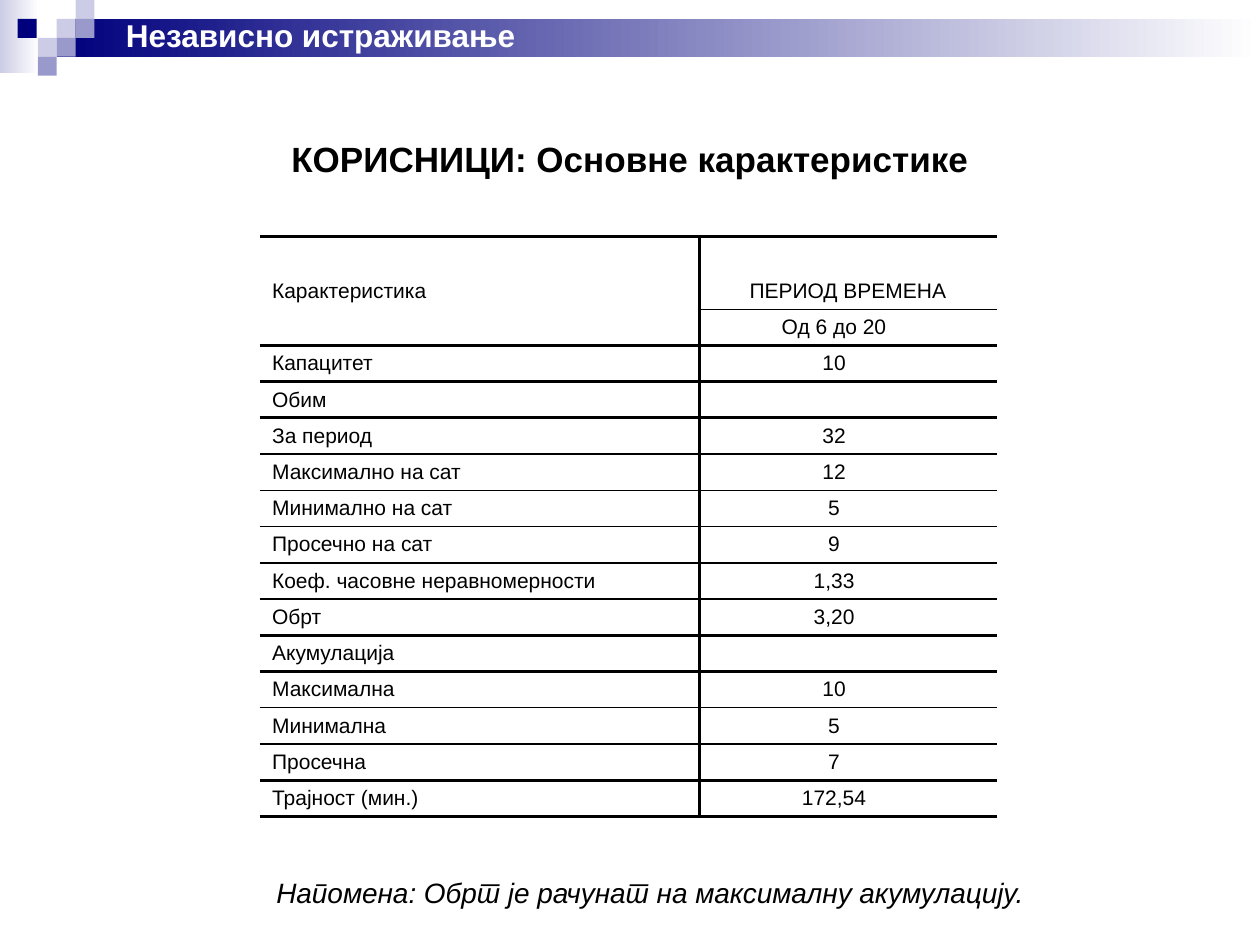
from dataclasses import dataclass

import pptx
import pptx.dml.color
import pptx.enum.shapes
import pptx.enum.text
import pptx.oxml
import pptx.oxml.ns
import pptx.util
from pptx.util import Inches

NO_GRID_STYLE = "{2D5ABB26-0587-4C30-8999-92F81FD0307C}"
NAMESPACE = pptx.oxml.ns.nsdecls("a")
ALIGN = pptx.enum.text.PP_ALIGN
NAVY, LILAC, PALE, WHITE, BLACK = "00007D", "9999CC", "CCCCE6", "FFFFFF", "000000"


@dataclass
class Block:
    """A decorative rectangle, shaded towards white when asked."""
    left: float
    top: float
    color: str
    width: float = 0.15
    height: float = 0.15
    gradient: bool = False


@dataclass
class Row:
    """A table row with the weight of the rule beneath it."""
    label: str
    value: str
    rule: float


BLOCKS = [
    Block(0, 0, PALE, 0.31, 0.58, True),
    Block(0.45, 0.15, NAVY, 9.55, 0.3, True),
    Block(0.45, 0.15, PALE),
    Block(0.6, 0, PALE),
    Block(0.6, 0.15, LILAC),
    Block(0.3, 0.3, PALE),
    Block(0.14, 0.15, NAVY),
    Block(0.45, 0.3, LILAC),
    Block(0.3, 0.45, LILAC),
]

HEADER_ROWS = 2
ROWS = [
    Row("", "", 0),
    Row("Карактеристика", "ПЕРИОД ВРЕМЕНА", 1),
    Row("", "Од 6 до 20", 2),
    Row("Капацитет", "10", 2),
    Row("Обим", "", 2),
    Row("За период", "32", 1),
    Row("Максимално на сат", "12", 1),
    Row("Минимално на сат", "5", 1),
    Row("Просечно на сат", "9", 1),
    Row("Коеф. часовне неравномерности", "1,33", 1),
    Row("Обрт", "3,20", 2),
    Row("Акумулација", "", 2),
    Row("Максимална", "10", 1),
    Row("Минимална", "5", 1),
    Row("Просечна", "7", 2),
    Row("Трајност (мин.)", "172,54", 2),
]
COLUMN_WIDTHS = [3.49, 0.5, 1.14, 0.72]


def rgb(color: str) -> pptx.dml.color.RGBColor:
    """Turn a hex string into a colour."""
    return pptx.dml.color.RGBColor.from_string(color)


def write_text(frame, text: str, *, size: float, color: str = BLACK, bold: bool = False,
               italic: bool = False, align=ALIGN.LEFT) -> None:
    """Write one formatted paragraph into a text frame."""
    frame.word_wrap = True
    paragraph = frame.paragraphs[0]
    paragraph.alignment = align
    if not text:
        paragraph._p.append(pptx.oxml.parse_xml(
            f'<a:endParaRPr {NAMESPACE} sz="{int(size * 100)}">'
            '<a:latin typeface="Arial"/></a:endParaRPr>'))
        return
    run = paragraph.add_run()
    run.text = text
    run._r.get_or_add_rPr().set("lang", "sr-RS")
    run.font.name = "Arial"
    run.font.size = pptx.util.Pt(size)
    run.font.bold = bold
    run.font.italic = italic
    run.font.color.rgb = rgb(color)


def draw_block(slide, block: Block) -> None:
    """Draw one decorative rectangle."""
    shape = slide.shapes.add_shape(
        pptx.enum.shapes.MSO_SHAPE.RECTANGLE, Inches(block.left), Inches(block.top),
        Inches(block.width), Inches(block.height))
    shape.shadow.inherit = False
    shape.line.fill.background()
    if block.gradient:
        shape.fill.gradient()
        shape.fill.gradient_angle = 0
        for stop, color in zip(shape.fill.gradient_stops, (block.color, WHITE)):
            stop.color.rgb = rgb(color)
    else:
        shape.fill.solid()
        shape.fill.fore_color.rgb = rgb(block.color)


def set_borders(cell, **weights: float) -> None:
    """Set the black or absent borders of a cell, keyed by side in L, R, T, B order."""
    properties = cell._tc.get_or_add_tcPr()
    for side, weight in weights.items():
        paint = (f'<a:solidFill><a:srgbClr val="{BLACK}"/></a:solidFill>' if weight
                 else "<a:noFill/>")
        properties.append(pptx.oxml.parse_xml(
            f'<a:ln{side} {NAMESPACE} w="{pptx.util.Pt(weight)}">{paint}</a:ln{side}>'))


def draw_table(slide) -> None:
    """Draw the table of user characteristics."""
    table = slide.shapes.add_table(
        len(ROWS), len(COLUMN_WIDTHS), Inches(2.06), Inches(1.88),
        Inches(sum(COLUMN_WIDTHS)), Inches(4.6)).table
    table.first_row = table.horz_banding = False
    table._tbl.tblPr.find(pptx.oxml.ns.qn("a:tableStyleId")).text = NO_GRID_STYLE
    for column, width in zip(table.columns, COLUMN_WIDTHS):
        column.width = Inches(width)
    for index, row in enumerate(ROWS):
        is_header = index < HEADER_ROWS
        if is_header:
            table.cell(index, 1).merge(table.cell(index, 3))
        texts = {0: row.label, 1 if is_header else 2: row.value}
        for column in range(len(COLUMN_WIDTHS)):
            cell = table.cell(index, column)
            cell.margin_top = cell.margin_bottom = Inches(0.05)
            write_text(cell.text_frame, texts.get(column, ""), size=12,
                       align=ALIGN.CENTER if column else ALIGN.LEFT)
            above = ROWS[index - 1].rule if index else 2
            if index == HEADER_ROWS and column == 0:
                above = 0
            set_borders(cell, L=2 if column == 1 else 0, R=2 if column == 0 else 0,
                        T=above, B=0 if is_header and column == 0 else row.rule)
            cell.fill.background()


def add_text_box(slide, text: str, left: float, top: float, width: float, height: float,
                 **text_format) -> None:
    """Add a text box holding one formatted paragraph."""
    shape = slide.shapes.add_textbox(Inches(left), Inches(top), Inches(width), Inches(height))
    write_text(shape.text_frame, text, **text_format)


def main() -> None:
    """Build and save the slide."""
    presentation = pptx.Presentation()
    presentation.slide_width, presentation.slide_height = Inches(10), Inches(7.5)
    slide = presentation.slides.add_slide(presentation.slide_layouts[5])
    for block in BLOCKS:
        draw_block(slide, block)
    title = slide.shapes.title
    title.left, title.top, title.width, title.height = map(Inches, (0.5, 0.5, 9, 1.52))
    title.text_frame.vertical_anchor = pptx.enum.text.MSO_ANCHOR.MIDDLE
    write_text(title.text_frame, "КОРИСНИЦИ: Основне карактеристике", size=20, bold=True,
               align=ALIGN.CENTER)
    draw_table(slide)
    add_text_box(slide, "Напомена: Обрт је рачунат на максималну акумулацију.",
                 0.67, 6.9, 8.98, 0.37, size=16, italic=True, align=ALIGN.CENTER)
    add_text_box(slide, "Независно истраживање", 0.9, 0.08, 5.59, 0.4,
                 size=18, color=WHITE, bold=True)
    presentation.save("out.pptx")


if __name__ == "__main__":
    main()
